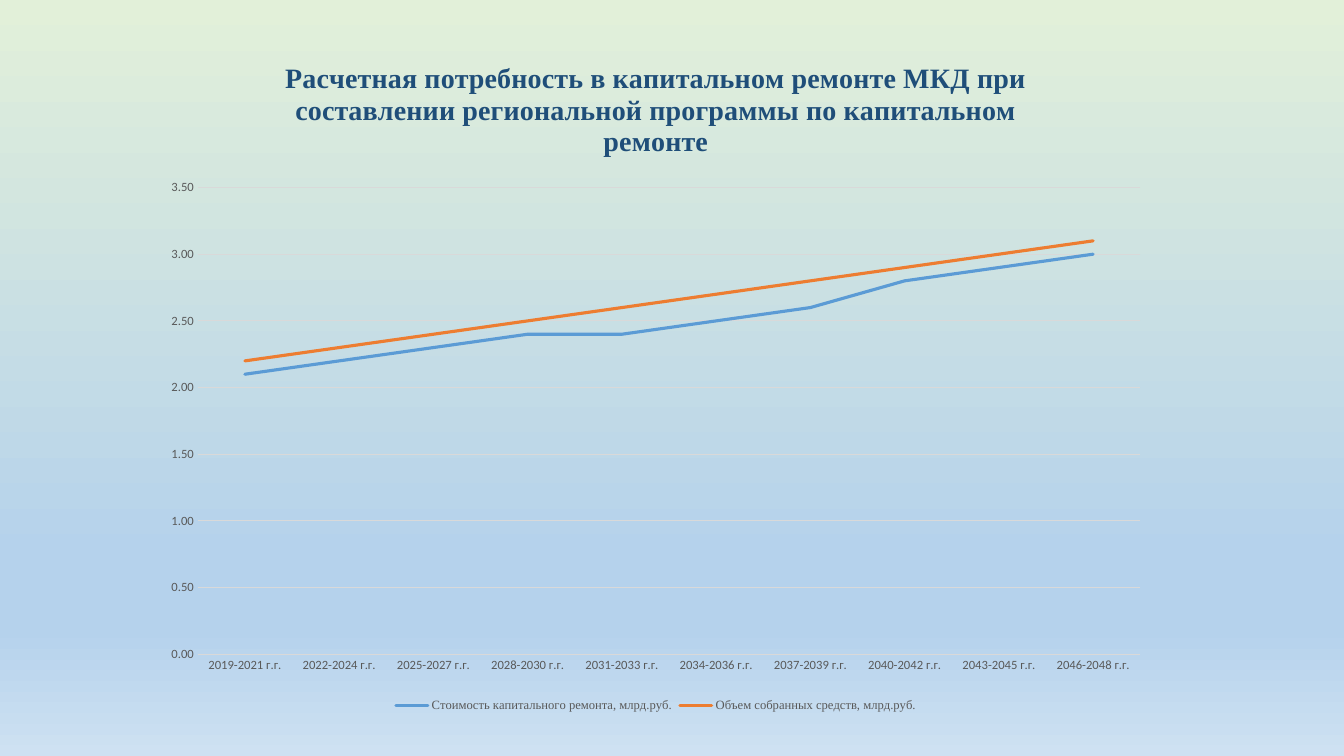
from lxml.etree import SubElement
from pptx import Presentation
from pptx.chart.data import CategoryChartData
from pptx.dml.color import RGBColor
from pptx.enum.chart import XL_CHART_TYPE, XL_LEGEND_POSITION, XL_TICK_MARK
from pptx.oxml.ns import qn
from pptx.util import Inches, Pt

COLORS = {
    "title": "1F4E79",
    "label": "595959",
    "grid": "D9D9D9",
    "cost": "5B9BD5",
    "funds": "ED7D31",
}
BACKGROUND_STOPS = [(0, "E2F0D9"), (74, "B5D2EC"), (83, "B5D2EC"), (100, "CEE1F2")]
TITLE = (
    "Расчетная потребность в капитальном ремонте МКД при "
    "составлении региональной программы по капитальном ремонте"
)
PERIODS = [f"{year}-{year + 2} г.г." for year in range(2019, 2047, 3)]
SERIES = [
    ("Стоимость капитального ремонта, млрд.руб.", "cost",
     [2.1, 2.2, 2.3, 2.4, 2.4, 2.5, 2.6, 2.8, 2.9, 3]),
    ("Объем собранных средств, млрд.руб.", "funds",
     [2.2, 2.3, 2.4, 2.5, 2.6, 2.7, 2.8, 2.9, 3, 3.1]),
]


def format_font(font, name, size, color, bold=False):
    """Set the typeface, size, colour and weight of a font."""
    font.name = name
    font.size = Pt(size)
    font.bold = bold
    font.color.rgb = RGBColor.from_string(COLORS[color])


def format_line(line, color, width):
    """Set the colour and width of a line."""
    line.color.rgb = RGBColor.from_string(COLORS[color])
    line.width = Pt(width)


def paint_background(slide):
    """Fill the slide with a vertical gradient."""
    fill = slide.background.fill
    fill.gradient()
    fill.gradient_angle = 270
    stops = slide.element.find(".//" + qn("a:gsLst"))
    for stop in list(stops):
        stops.remove(stop)
    for percent, color in BACKGROUND_STOPS:
        stop = SubElement(stops, qn("a:gs"), pos=str(percent * 1000))
        SubElement(stop, qn("a:srgbClr"), val=color)


def add_line_chart(slide):
    """Add the line chart and style its series with round line ends."""
    data = CategoryChartData(number_format="#,##0.00")
    data.categories = PERIODS
    for name, _, values in SERIES:
        data.add_series(name, values)
    chart = slide.shapes.add_chart(
        XL_CHART_TYPE.LINE, Inches(1.5), Inches(0.36), Inches(10.01), Inches(6.75), data
    ).chart
    chart.font.name = "Calibri"
    chart.font.size = Pt(10)
    for series, (_, color, _) in zip(chart.plots[0].series, SERIES):
        series.smooth = False
        format_line(series.format.line, color, 2.25)
    for line in chart.element.iter(qn("a:ln")):
        line.set("cap", "rnd")
    return chart


def add_title(chart):
    """Write the chart title."""
    text_frame = chart.chart_title.text_frame
    text_frame.text = TITLE
    format_font(text_frame.paragraphs[0].runs[0].font, "Times New Roman", 20, "title", True)
    chart.chart_title.include_in_layout = False


def format_axes(chart):
    """Style both axes and the gridlines."""
    for axis in (chart.category_axis, chart.value_axis):
        axis.major_tick_mark = XL_TICK_MARK.NONE
        axis.minor_tick_mark = XL_TICK_MARK.NONE
        format_font(axis.tick_labels.font, "Calibri", 9, "label")
    format_line(chart.category_axis.format.line, "grid", 0.75)
    value_axis = chart.value_axis
    value_axis.minimum_scale = 0
    value_axis.maximum_scale = 3.5
    value_axis.major_unit = 0.5
    value_axis.tick_labels.number_format = "#,##0.00"
    value_axis.tick_labels.number_format_is_linked = False
    value_axis.format.line.fill.background()
    format_line(value_axis.major_gridlines.format.line, "grid", 0.75)


def add_legend(chart):
    """Place the legend under the plot."""
    chart.has_legend = True
    chart.legend.position = XL_LEGEND_POSITION.BOTTOM
    chart.legend.include_in_layout = False
    format_font(chart.legend.font, "Times New Roman", 9, "label")


def main():
    """Build the slide and save it."""
    presentation = Presentation()
    presentation.slide_width = Inches(13.33)
    presentation.slide_height = Inches(7.5)
    slide = presentation.slides.add_slide(presentation.slide_layouts[6])
    paint_background(slide)
    chart = add_line_chart(slide)
    add_title(chart)
    format_axes(chart)
    add_legend(chart)
    presentation.save("out.pptx")


if __name__ == "__main__":
    main()
